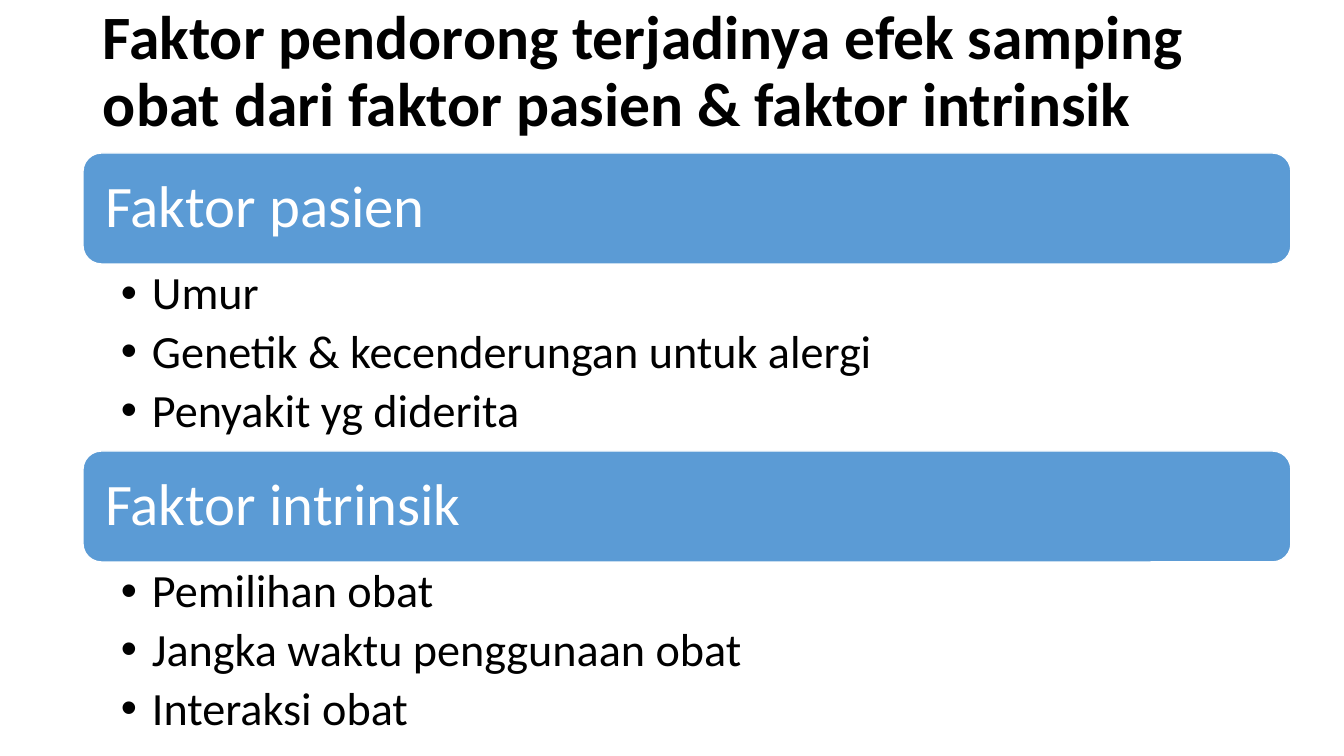
from dataclasses import dataclass

import pptx
import pptx.dml.color
import pptx.enum.shapes
import pptx.enum.text
import pptx.util
from lxml import etree
from pptx.oxml.ns import qn

SCALE = 914400 / 100.8
FONT = "Calibri"
BLACK, WHITE, BLUE = "000000", "FFFFFF", "5B9BD5"
LEFT, WIDTH = 83, 1208
TOP, STEP = 153, 298
BAR, LIST = 111, 186
INDENT = 31


@dataclass
class Group:
    head: str
    items: list[str]


GROUPS = [
    Group("Faktor pasien",
          ["Umur", "Genetik & kecenderungan untuk alergi", "Penyakit yg diderita"]),
    Group("Faktor intrinsik",
          ["Pemilihan obat", "Jangka waktu penggunaan obat", "Interaksi obat"]),
]


def px(n: int) -> pptx.util.Emu:
    return pptx.util.Emu(round(n * SCALE))


def color(code: str) -> pptx.dml.color.RGBColor:
    return pptx.dml.color.RGBColor.from_string(code)


def set_frame(frame, sides: tuple[int, int, int, int], middle: bool) -> None:
    """Set wrapping, anchor and insets (left, top, right, bottom)."""
    frame.word_wrap = True
    anchor = pptx.enum.text.MSO_ANCHOR
    frame.vertical_anchor = anchor.MIDDLE if middle else anchor.TOP
    (frame.margin_left, frame.margin_top,
     frame.margin_right, frame.margin_bottom) = map(px, sides)


def add_bullet(para) -> None:
    props = para._p.get_or_add_pPr()
    props.set("marL", str(px(INDENT)))
    props.set("indent", str(-px(INDENT)))
    etree.SubElement(props, qn("a:buFont")).set("typeface", "Arial")
    etree.SubElement(props, qn("a:buChar")).set("char", "•")


def write(para, text: str, size: int, code: str, bold: bool = False) -> None:
    para.alignment = pptx.enum.text.PP_ALIGN.LEFT
    para.line_spacing = 0.9
    run = para.add_run()
    run.text = text
    run.font.name = FONT
    run.font.size = pptx.util.Pt(size)
    run.font.bold = bold
    run.font.color.rgb = color(code)


def add_title(slide, text: str) -> None:
    box = slide.shapes.add_textbox(px(93), px(0), px(1198), px(146))
    set_frame(box.text_frame, (10, 5, 10, 5), True)
    write(box.text_frame.paragraphs[0], text, 44, BLACK, True)


def add_bar(slide, top: int, text: str) -> None:
    kind = pptx.enum.shapes.MSO_SHAPE.ROUNDED_RECTANGLE
    bar = slide.shapes.add_shape(kind, px(LEFT), px(top), px(WIDTH), px(BAR))
    bar.shadow.inherit = False
    bar.fill.solid()
    bar.fill.fore_color.rgb = color(BLUE)
    bar.line.color.rgb = color(WHITE)
    bar.line.width = pptx.util.Pt(1)
    set_frame(bar.text_frame, (17, 17, 17, 17), True)
    write(bar.text_frame.paragraphs[0], text, 42, WHITE)


def add_list(slide, top: int, items: list[str]) -> None:
    box = slide.shapes.add_textbox(px(LEFT), px(top), px(WIDTH), px(LIST))
    frame = box.text_frame
    set_frame(frame, (38, 6, 33, 6), False)
    for i, item in enumerate(items):
        para = frame.add_paragraph() if i else frame.paragraphs[0]
        add_bullet(para)
        para.level = 1
        para.space_after = pptx.util.Pt(6.3)
        write(para, item, 33, BLACK)


def main() -> None:
    deck = pptx.Presentation()
    deck.slide_width, deck.slide_height = px(1344), px(756)
    slide = deck.slides.add_slide(deck.slide_layouts[6])
    add_title(slide, "Faktor pendorong terjadinya efek samping obat "
                     "dari faktor pasien & faktor intrinsik")
    for i, group in enumerate(GROUPS):
        top = TOP + i * STEP
        add_bar(slide, top, group.head)
        add_list(slide, top + BAR, group.items)
    deck.save("out.pptx")


if __name__ == "__main__":
    main()
